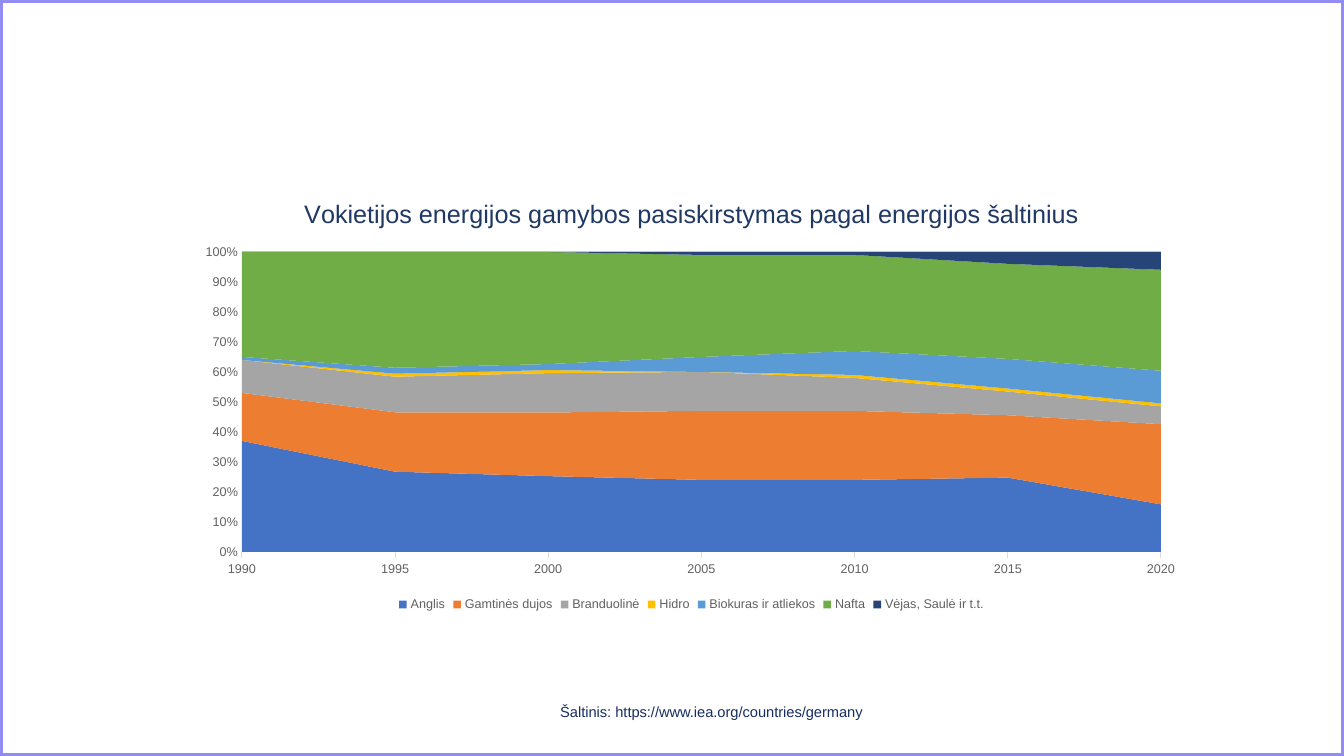
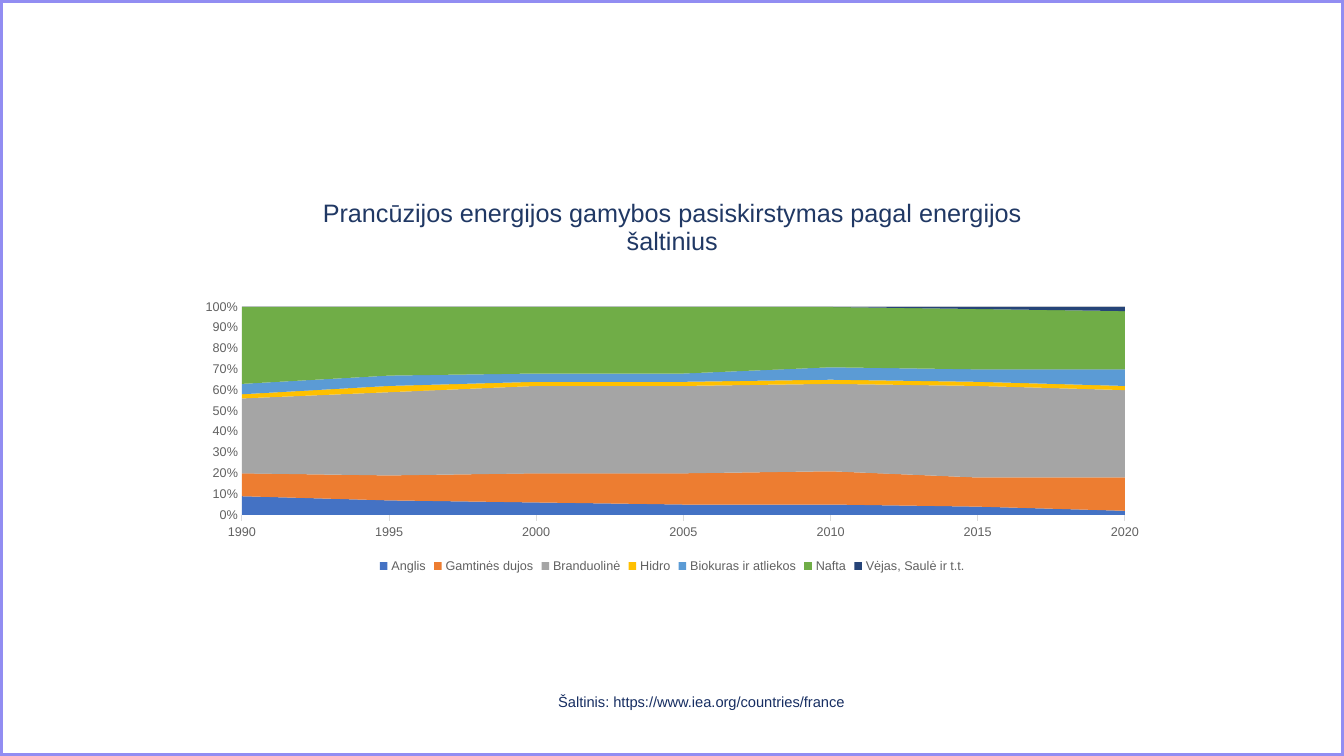
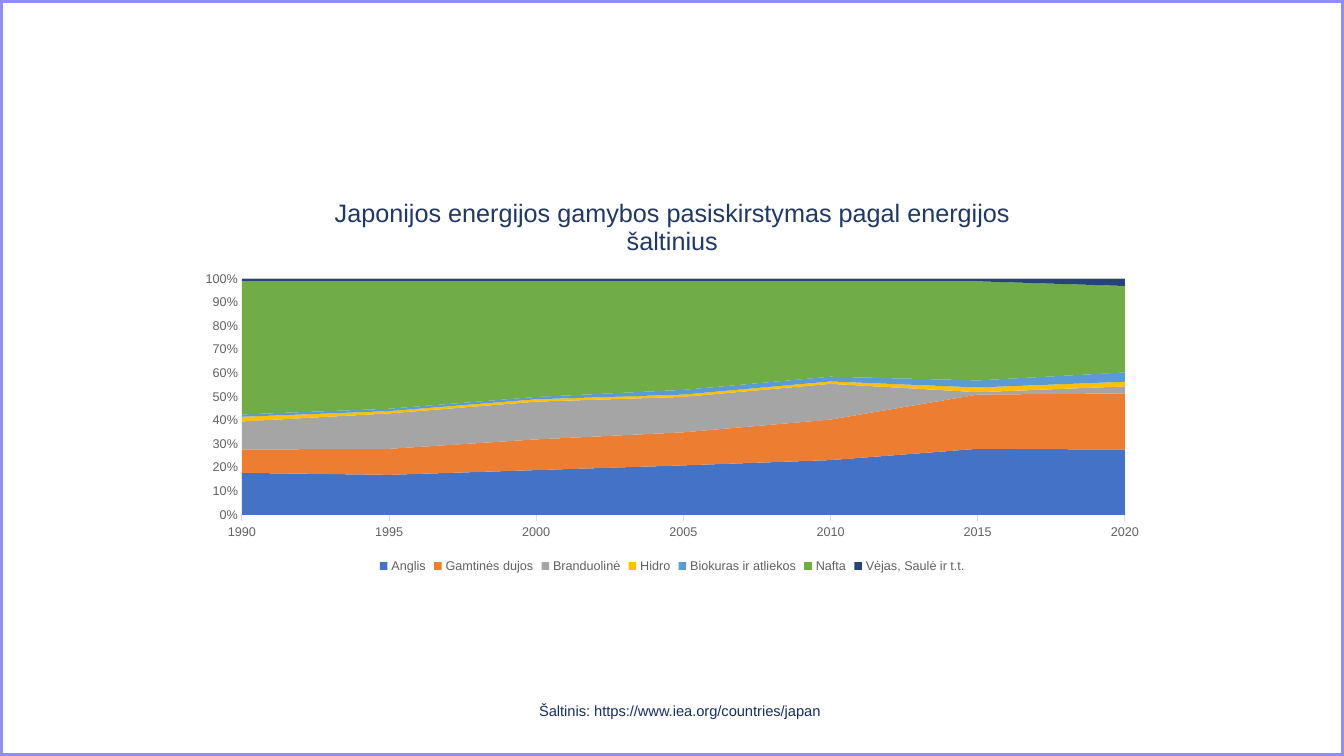
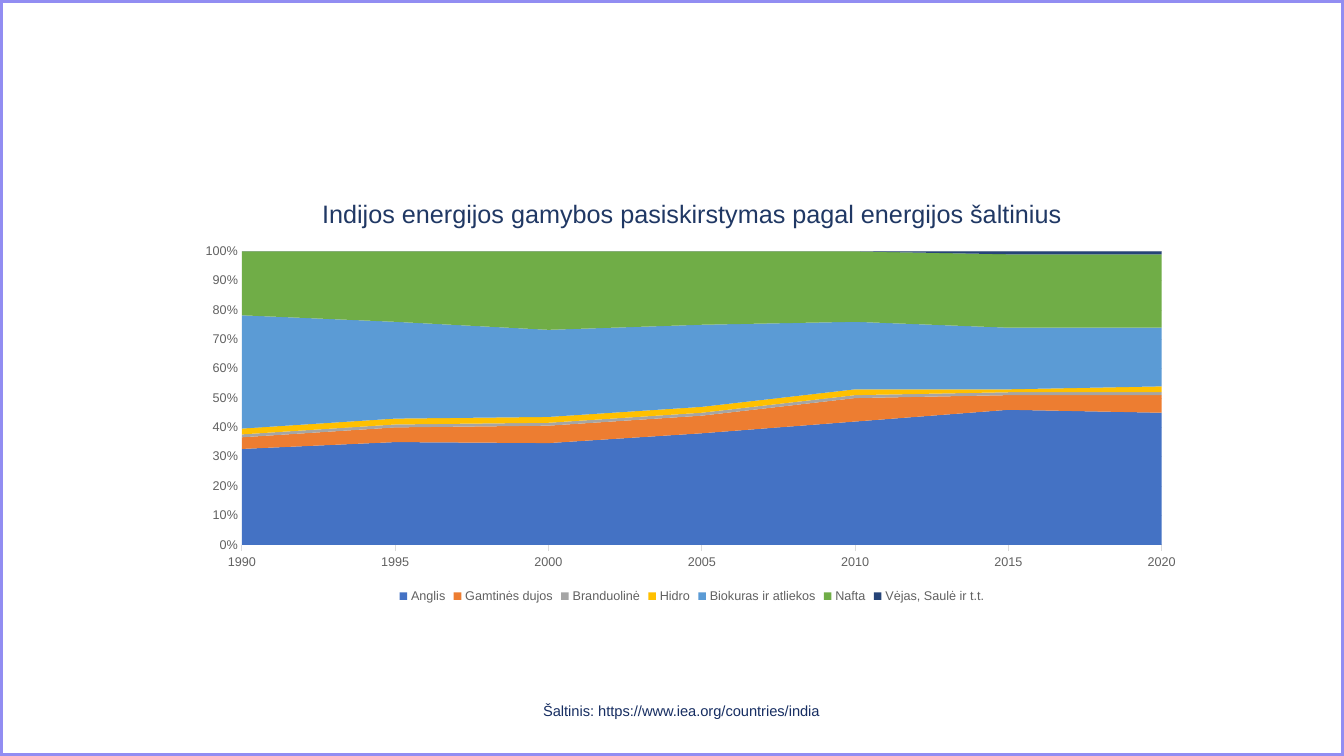
from dataclasses import dataclass

from lxml.etree import SubElement
from pptx import Presentation
from pptx.chart.data import CategoryChartData
from pptx.dml.color import RGBColor
from pptx.enum.chart import XL_CHART_TYPE, XL_LEGEND_POSITION, XL_TICK_MARK
from pptx.enum.shapes import MSO_SHAPE
from pptx.oxml.ns import qn
from pptx.util import Pt

FONT = "Arial"
FRAME_COLOR = "928DF2"
TITLE_COLOR = "203864"
SOURCE_COLOR = "172E62"
TEXT_COLOR = "0C0C0C"
AXIS_TEXT_COLOR = "616161"
LINE_COLOR = "DBDBDB"

SLIDE_WIDTH, SLIDE_HEIGHT = 960, 540
CHART_LEFT, CHART_TOP = 133.2, 127.44
PLOT_LEFT = 172.8

YEARS = ["1990", "1995", "2000", "2005", "2010", "2015", "2020"]
ENERGY_COLORS = {
    "Anglis": "4472C4",
    "Gamtinės dujos": "ED7D31",
    "Branduolinė": "A5A5A5",
    "Hidro": "FFC000",
    "Biokuras ir atliekos": "5B9BD5",
    "Nafta": "70AD47",
    "Vėjas, Saulė ir t.t.": "264478",
}


@dataclass
class Country:
    """Energy shares of one country and the places of its chart and source."""

    name: str
    address: str
    chart_size: tuple
    plot_top: float
    plot_size: tuple
    source_place: tuple
    shares: list


COUNTRIES = [
    Country(
        "Vokietijos", "germany", (721.5, 312.5), 180, (656.5, 214.3), (393.1, 493.2),
        [
            [37, 27, 25, 24, 24, 25, 16],
            [16, 20, 21, 23, 23, 21, 27],
            [11, 12, 13, 13, 11, 8, 6],
            [0, 1, 1, 0, 1, 1, 1],
            [1, 2, 2, 5, 8, 10, 11],
            [35, 39, 37, 34, 32, 32, 34],
            [0, 0, 0, 1, 1, 4, 6],
        ],
    ),
    Country(
        "Prancūzijos", "france", (694, 285), 219.3, (630.7, 148.6), (391.7, 486),
        [
            [9, 7, 6, 5, 5, 4, 2],
            [11, 12, 14, 15, 16, 14, 16],
            [36, 40, 42, 42, 42, 44, 42],
            [2, 3, 2, 2, 2, 2, 2],
            [5, 5, 4, 4, 6, 6, 8],
            [37, 33, 32, 32, 29, 29, 28],
            [0, 0, 0, 0, 0, 1, 2],
        ],
    ),
    Country(
        "Japonijos", "japan", (694, 285), 199.3, (630.7, 168.6), (378, 492.5),
        [
            [18, 17, 19, 21, 23, 28, 28],
            [10, 11, 13, 14, 17, 23, 24],
            [12, 15, 16, 15, 15, 1, 3],
            [2, 1, 1, 1, 1, 2, 2],
            [1, 1, 1, 2, 2, 3, 4],
            [57, 54, 49, 46, 40, 42, 37],
            [1, 1, 1, 1, 1, 1, 3],
        ],
    ),
    Country(
        "Indijos", "india", (722, 306.5), 179.6, (657, 209.6), (380.9, 492.5),
        [
            [33, 35, 35, 38, 42, 46, 45],
            [4, 5, 6, 6, 8, 5, 6],
            [1, 1, 1, 1, 1, 1, 1],
            [2, 2, 2, 2, 2, 1, 2],
            [39, 33, 30, 28, 23, 21, 20],
            [22, 24, 27, 25, 24, 25, 25],
            [0, 0, 0, 0, 0, 1, 1],
        ],
    ),
]


def color(value):
    """Turn a hex string into a colour."""
    return RGBColor.from_string(value)


def style_font(font, size, value):
    """Set typeface, size and colour of a font."""
    font.name = FONT
    font.size = Pt(size)
    font.bold = False
    font.color.rgb = color(value)


def style_line(line, value, width):
    """Set colour and width of a line."""
    line.color.rgb = color(value)
    line.width = Pt(width)


def add_frame(slide):
    """Put the slide frame on the layout that all slides share."""
    frame = slide.shapes.add_shape(
        MSO_SHAPE.RECTANGLE, 0, 0, Pt(SLIDE_WIDTH), Pt(SLIDE_HEIGHT)
    )
    frame.shadow.inherit = False
    frame.fill.background()
    style_line(frame.line, FRAME_COLOR, 4)
    slide.slide_layout.shapes.element.append(frame.element)


def place_plot(chart, country):
    """Fix the inner plot area inside the chart."""
    chart_width, chart_height = country.chart_size
    plot_width, plot_height = country.plot_size
    plot_area = chart.element.find(".//" + qn("c:plotArea"))
    layout = plot_area.find(qn("c:layout"))
    if layout is None:
        layout = SubElement(plot_area, qn("c:layout"))
        plot_area.insert(0, layout)
    manual = SubElement(layout, qn("c:manualLayout"))
    settings = {
        "layoutTarget": "inner",
        "xMode": "edge",
        "yMode": "edge",
        "x": (PLOT_LEFT - CHART_LEFT) / chart_width,
        "y": (country.plot_top - CHART_TOP) / chart_height,
        "w": plot_width / chart_width,
        "h": plot_height / chart_height,
    }
    for name, value in settings.items():
        SubElement(manual, qn("c:" + name)).set("val", str(value))


def style_axes(chart):
    """Format the year axis and the percent axis."""
    years, percents = chart.category_axis, chart.value_axis
    for axis in (years, percents):
        style_font(axis.tick_labels.font, 9, AXIS_TEXT_COLOR)
        axis.minor_tick_mark = XL_TICK_MARK.NONE
    years.has_major_gridlines = False
    years.major_tick_mark = XL_TICK_MARK.OUTSIDE
    style_line(years.format.line, LINE_COLOR, 0.75)
    percents.major_tick_mark = XL_TICK_MARK.NONE
    percents.format.line.fill.background()
    percents.has_major_gridlines = True
    style_line(percents.major_gridlines.format.line, LINE_COLOR, 0.75)
    percents.minimum_scale, percents.maximum_scale = 0, 1
    percents.major_unit = 0.1
    percents.tick_labels.number_format = "0%"
    percents.tick_labels.number_format_is_linked = False
    chart.element.find(".//" + qn("c:crossBetween")).set("val", "midCat")


def add_energy_chart(slide, country):
    """Add the stacked area chart of energy shares."""
    data = CategoryChartData()
    data.categories = YEARS
    for name, shares in zip(ENERGY_COLORS, country.shares):
        data.add_series(name, shares)
    width, height = country.chart_size
    chart = slide.shapes.add_chart(
        XL_CHART_TYPE.AREA_STACKED_100,
        Pt(CHART_LEFT), Pt(CHART_TOP), Pt(width), Pt(height), data,
    ).chart
    style_font(chart.font, 10, TEXT_COLOR)
    chart.has_title = True
    title = chart.chart_title
    title.include_in_layout = False
    title.text_frame.text = (
        f"{country.name} energijos gamybos pasiskirstymas pagal energijos šaltinius"
    )
    style_font(title.text_frame.paragraphs[0].runs[0].font, 18, TITLE_COLOR)
    chart.has_legend = True
    chart.legend.position = XL_LEGEND_POSITION.BOTTOM
    chart.legend.include_in_layout = False
    style_font(chart.legend.font, 9, AXIS_TEXT_COLOR)
    plot = chart.plots[0]
    plot.vary_by_categories = False
    for series, value in zip(plot.series, ENERGY_COLORS.values()):
        series.format.fill.solid()
        series.format.fill.fore_color.rgb = color(value)
        series.format.line.fill.background()
    style_axes(chart)
    place_plot(chart, country)


def add_source(slide, country):
    """Add the line that names the data source."""
    left, top = country.source_place
    box = slide.shapes.add_textbox(Pt(left), Pt(top), Pt(236), Pt(27.4))
    text_frame = box.text_frame
    text_frame.word_wrap = True
    text_frame.margin_left = text_frame.margin_right = Pt(7.2)
    text_frame.margin_top = text_frame.margin_bottom = Pt(7.2)
    text_frame.text = f"Šaltinis: https://www.iea.org/countries/{country.address}"
    paragraph = text_frame.paragraphs[0]
    paragraph.line_spacing = 1.15
    style_font(paragraph.runs[0].font, 10.5, SOURCE_COLOR)


def main():
    """Build and save the presentation."""
    presentation = Presentation()
    presentation.slide_width = Pt(SLIDE_WIDTH)
    presentation.slide_height = Pt(SLIDE_HEIGHT)
    blank = presentation.slide_layouts[6]
    for country in COUNTRIES:
        slide = presentation.slides.add_slide(blank)
        add_energy_chart(slide, country)
        add_source(slide, country)
    add_frame(presentation.slides[0])
    presentation.save("out.pptx")


if __name__ == "__main__":
    main()
